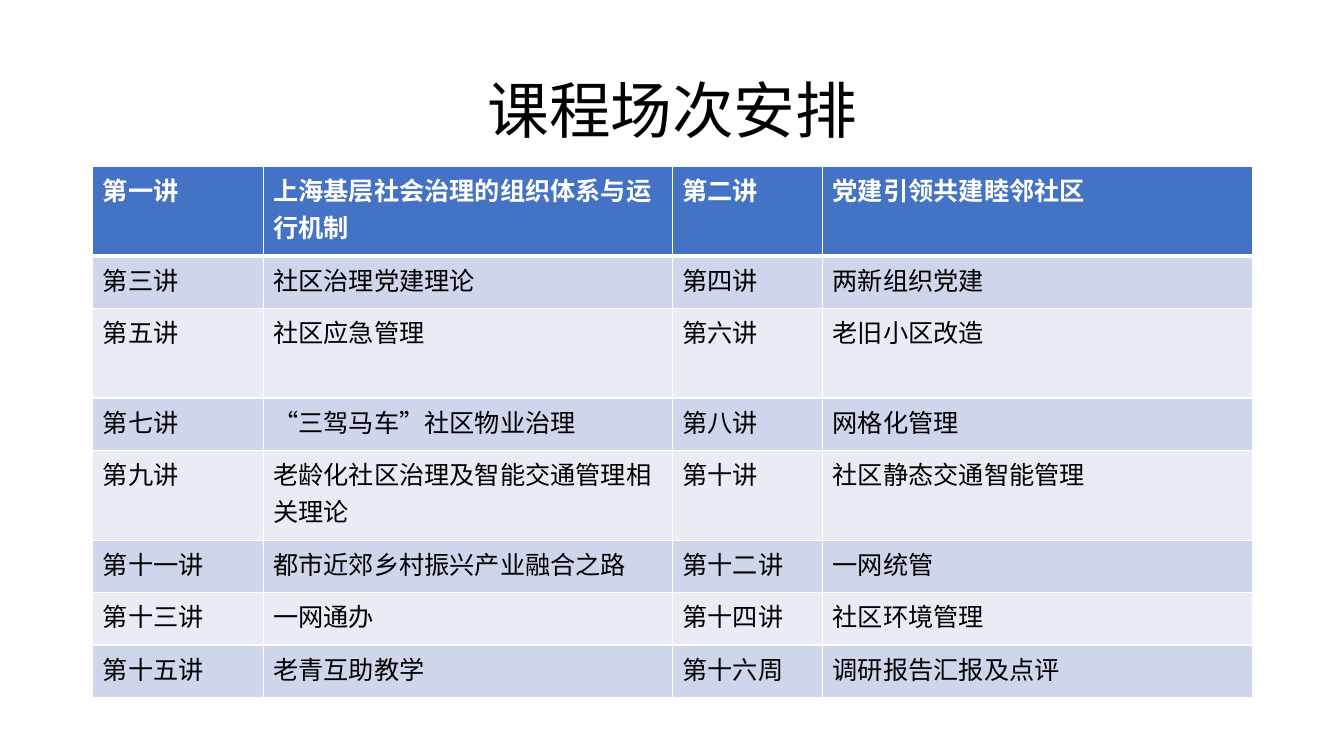
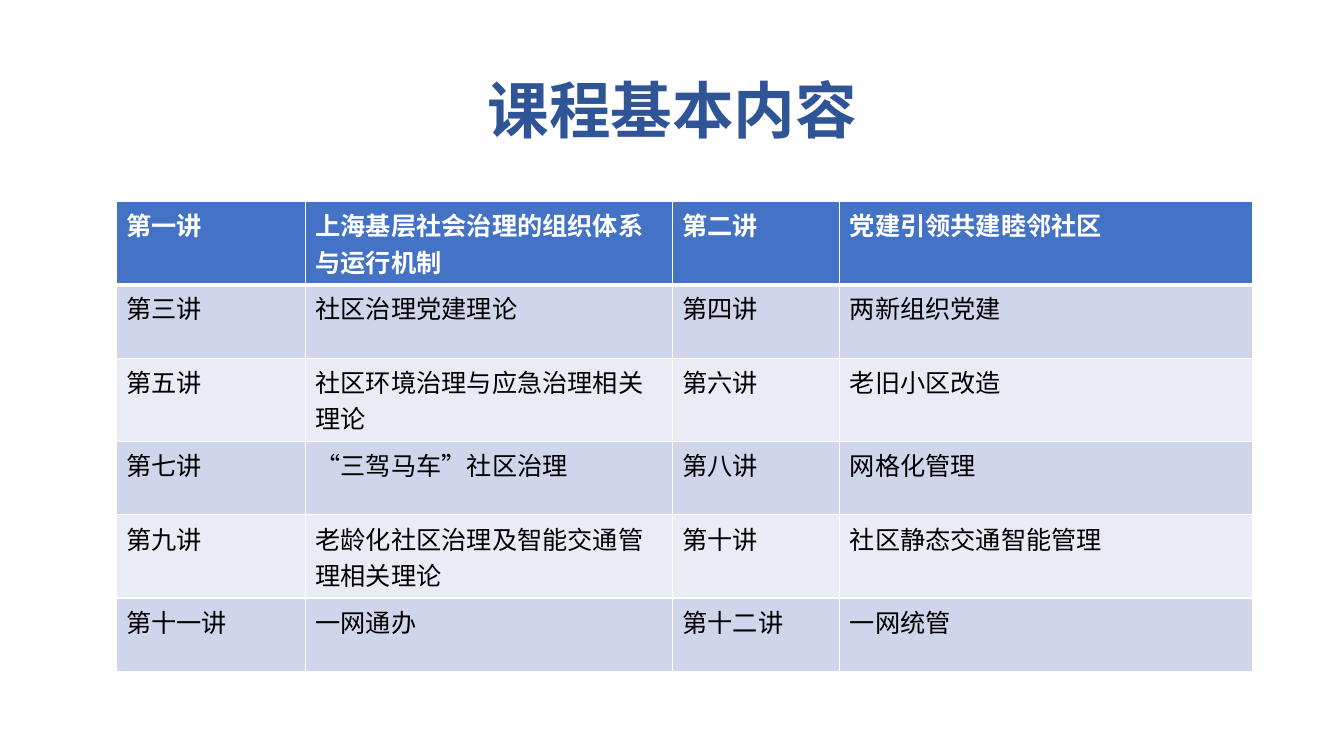
from lxml.etree import SubElement
from pptx import Presentation
from pptx.dml.color import RGBColor
from pptx.enum.lang import MSO_LANGUAGE_ID
from pptx.enum.text import MSO_ANCHOR, PP_ALIGN
from pptx.oxml.ns import qn
from pptx.util import Inches, Pt

FONT = "Noto Sans CJK SC"
COLORS = {
    "black": "000000",
    "white": "FFFFFF",
    "navy": "2F5597",
    "header": "4472C4",
    "band_dark": "CFD5EA",
    "band_light": "E9EBF5",
}

# Lecture number and topic, two lectures per row
SCHEDULE = [
    ("第一讲", "上海基层社会治理的组织体系与运行机制", "第二讲", "党建引领共建睦邻社区"),
    ("第三讲", "社区治理党建理论", "第四讲", "两新组织党建"),
    ("第五讲", "社区应急管理", "第六讲", "老旧小区改造"),
    ("第七讲", "“三驾马车”社区物业治理", "第八讲", "网格化管理"),
    ("第九讲", "老龄化社区治理及智能交通管理相关理论", "第十讲", "社区静态交通智能管理"),
    ("第十一讲", "都市近郊乡村振兴产业融合之路", "第十二讲", "一网统管"),
    ("第十三讲", "一网通办", "第十四讲", "社区环境管理"),
    ("第十五讲", "老青互助教学", "第十六周", "调研报告汇报及点评"),
]
CONTENTS = [
    SCHEDULE[0],
    SCHEDULE[1],
    ("第五讲", "社区环境治理与应急治理相关理论", "第六讲", "老旧小区改造"),
    ("第七讲", "“三驾马车”社区治理", "第八讲", "网格化管理"),
    SCHEDULE[4],
    ("第十一讲", "一网通办", "第十二讲", "一网统管"),
]


class Deck:
    """Holds the shared style and the current slide."""

    def __init__(self):
        self.prs = Presentation()
        self.prs.slide_width = Inches(13.33)
        self.prs.slide_height = Inches(7.5)
        self.slide = None

    def add_slide(self, title, color="black", bold=False):
        self.slide = self.prs.slides.add_slide(self.prs.slide_layouts[5])
        heading = self.slide.shapes.title
        heading.left, heading.top = Inches(0.92), Inches(0.4)
        heading.width, heading.height = Inches(11.5), Inches(1.45)
        frame = heading.text_frame
        frame.text = title
        frame.word_wrap = True
        frame.vertical_anchor = MSO_ANCHOR.MIDDLE
        frame.paragraphs[0].alignment = PP_ALIGN.CENTER
        frame.paragraphs[0].line_spacing = 0.9
        self.format_runs(frame, 44, color, bold)

    def format_runs(self, frame, size, color, bold):
        for paragraph in frame.paragraphs:
            for run in paragraph.runs:
                font = run.font
                font.name, font.size, font.bold = FONT, Pt(size), bold
                font.color.rgb = RGBColor.from_string(COLORS[color])
                font.language_id = MSO_LANGUAGE_ID.SIMPLIFIED_CHINESE
                # East Asian typeface follows the Latin one
                latin = run._r.get_or_add_rPr().find(qn("a:latin"))
                east_asian = latin.makeelement(qn("a:ea"), {"typeface": FONT})
                latin.addnext(east_asian)

    def add_borders(self, cell, top, bottom):
        widths = {"a:lnL": 1, "a:lnR": 1, "a:lnT": top, "a:lnB": bottom}
        properties = cell._tc.get_or_add_tcPr()
        for tag, width in widths.items():
            line = SubElement(properties, qn(tag), w=str(Pt(width)))
            fill = SubElement(line, qn("a:solidFill"))
            SubElement(fill, qn("a:srgbClr"), val=COLORS["white"])

    def add_table(self, left, top, widths, heights, lectures):
        table = self.slide.shapes.add_table(
            len(lectures), len(widths), Inches(left), Inches(top),
            Inches(sum(widths)), Inches(sum(heights))).table
        for column, width in zip(table.columns, widths):
            column.width = Inches(width)
        for row, height in zip(table.rows, heights):
            row.height = Inches(height)
        for r, texts in enumerate(lectures):
            is_header = r == 0
            band = "header" if is_header else ("band_light", "band_dark")[r % 2]
            for c, text in enumerate(texts):
                cell = table.cell(r, c)
                cell.text_frame.text = text
                self.format_runs(cell.text_frame, 18,
                                 "white" if is_header else "black", is_header)
                # The rule below the header is thicker
                self.add_borders(cell, 3 if r == 1 else 1, 3 if is_header else 1)
                cell.fill.solid()
                cell.fill.fore_color.rgb = RGBColor.from_string(COLORS[band])


def main():
    deck = Deck()

    # Course schedule
    deck.add_slide("课程场次安排")
    tall, low = 0.89, 0.52
    deck.add_table(0.92, 1.65, [1.69, 4.06, 1.49, 4.26],
                   [tall, low] * 3 + [low] * 2, SCHEDULE)

    # Course contents
    deck.add_slide("课程基本内容", "navy", bold=True)
    deck.add_table(1.15, 2, [1.88, 3.64, 1.66, 4.09],
                   [0.73] * len(CONTENTS), CONTENTS)

    deck.prs.save("out.pptx")


if __name__ == "__main__":
    main()
